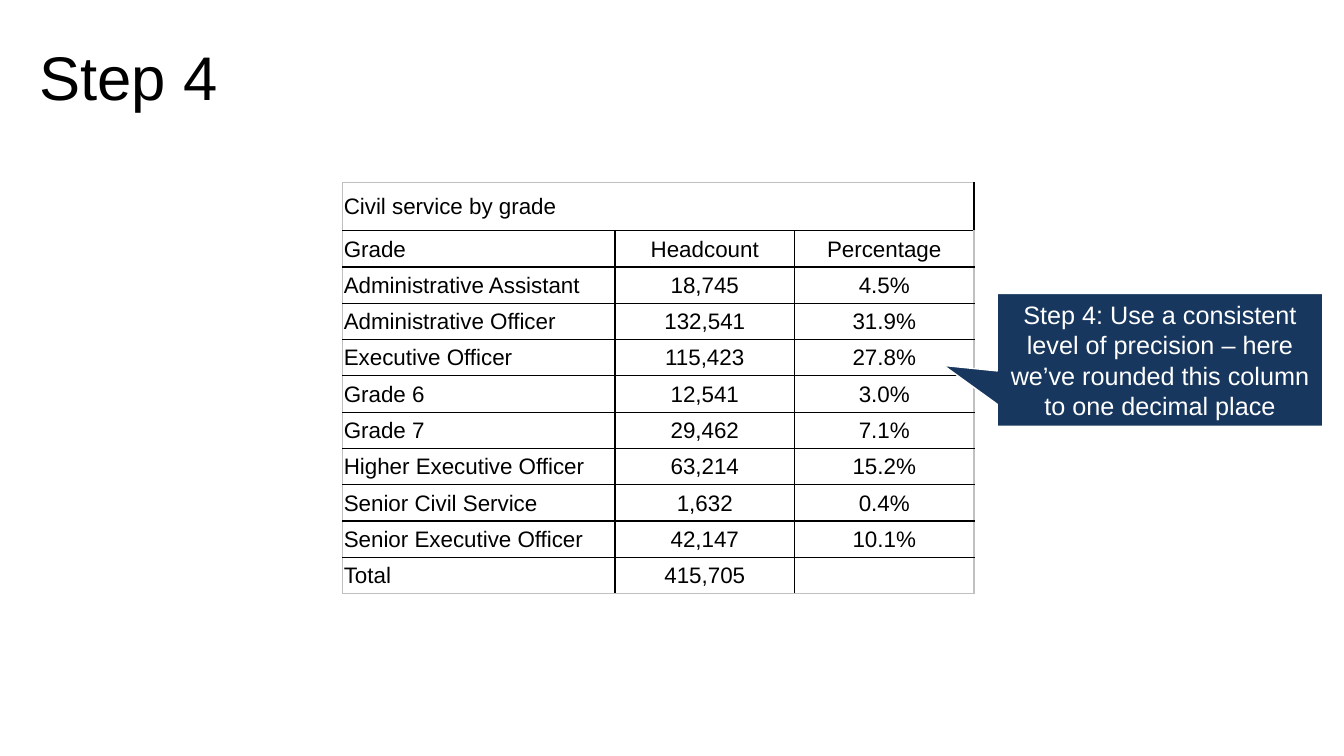
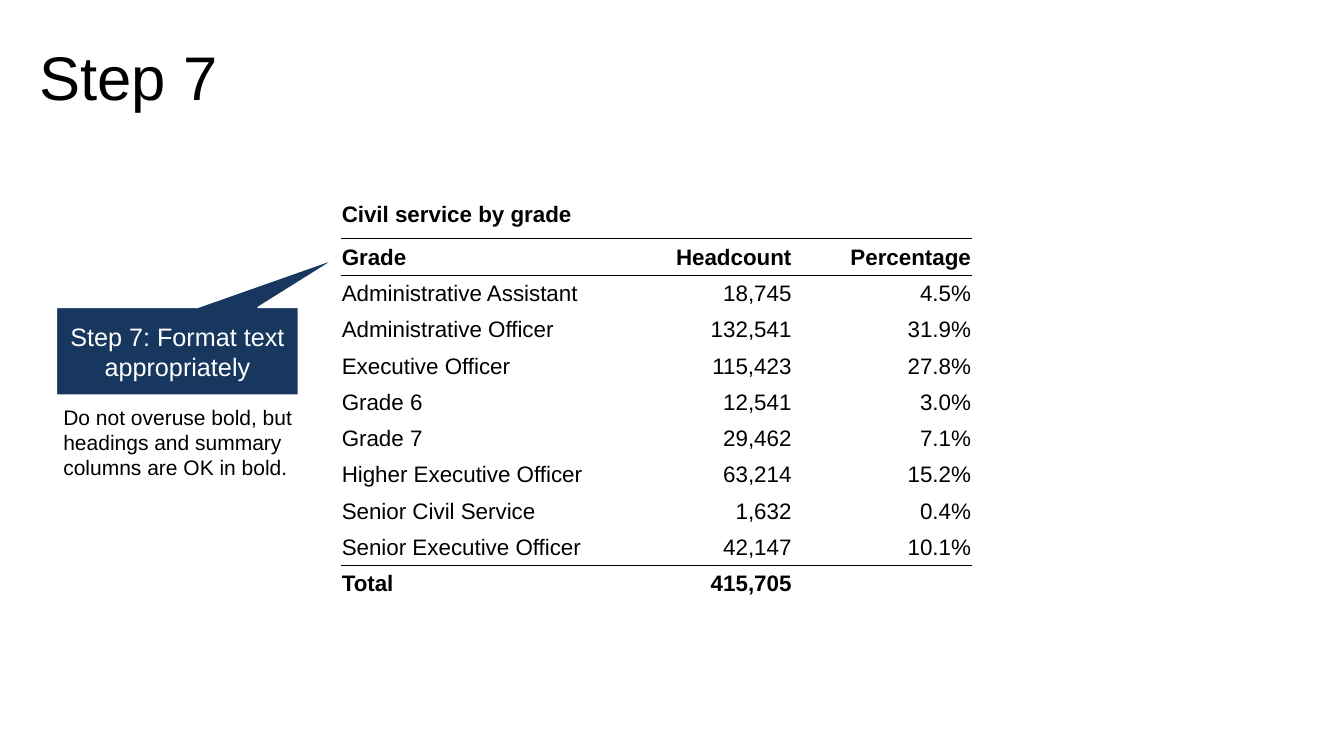
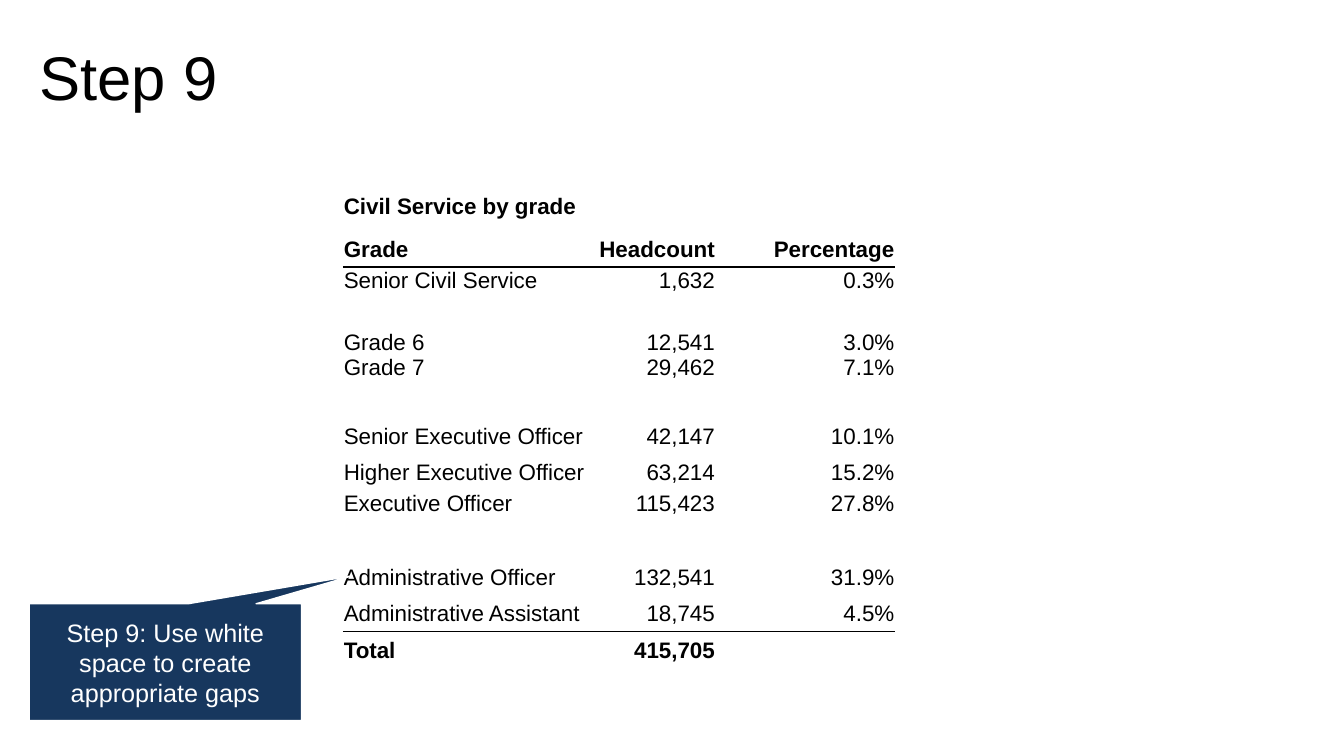
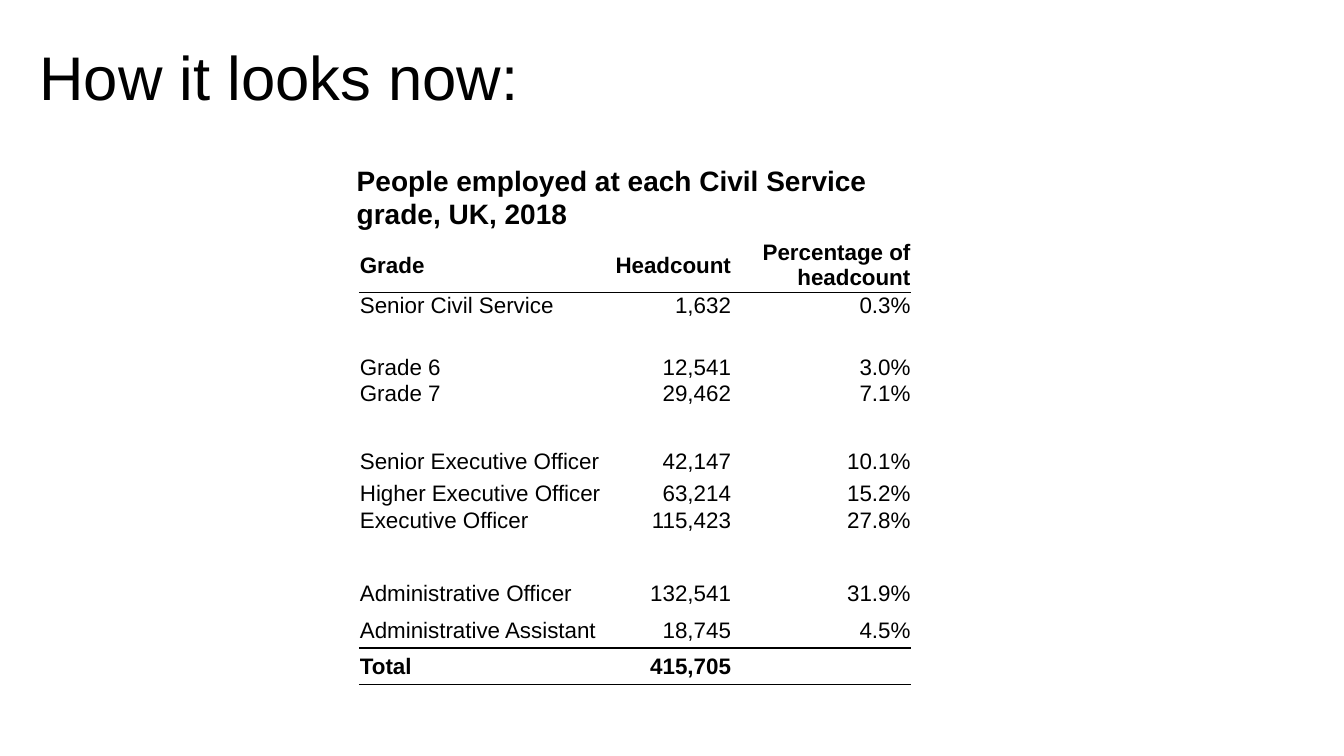
"""Build four slides that improve a table of civil service grades step by step."""
from lxml import etree
from pptx import Presentation
from pptx.dml.color import RGBColor
from pptx.enum.shapes import MSO_SHAPE as Shape
from pptx.enum.text import MSO_ANCHOR as Anchor, MSO_AUTO_SIZE as AutoSize, PP_ALIGN as Align
from pptx.oxml.ns import qn
from pptx.util import Inches, Pt

BLACK, WHITE, NAVY, GREY = "000000", "FFFFFF", "17375E", "C0C0C0"
FONT = "Arial"
LINE = 0.36
TIGHT = 0.27


def color(value):
    return RGBColor.from_string(value)


def write(frame, text, size, ink=BLACK, bold=False, align=Align.LEFT):
    frame.text = text
    frame.word_wrap = True
    for para in frame.paragraphs:
        para.alignment = align
        for span in para.runs:
            span.font.name = FONT
            span.font.size = Pt(size)
            span.font.bold = bold
            span.font.color.rgb = color(ink)


header = ("Grade", "Headcount", "Percentage", LINE, Anchor.MIDDLE)
total = ("Total", "415,705", "", LINE, Anchor.MIDDLE)
alphabetical = [
    ("Administrative Assistant", "18,745", "4.5%"),
    ("Administrative Officer", "132,541", "31.9%"),
    ("Executive Officer", "115,423", "27.8%"),
    ("Grade 6", "12,541", "3.0%"),
    ("Grade 7", "29,462", "7.1%"),
    ("Higher Executive Officer", "63,214", "15.2%"),
    ("Senior Civil Service", "1,632", "0.4%"),
    ("Senior Executive Officer", "42,147", "10.1%"),
]
even_rows = [
    ("Civil service by grade", "", "", 0.48, Anchor.MIDDLE),
    header,
    *[(*grade, LINE, Anchor.MIDDLE) for grade in alphabetical],
    total,
]
by_seniority = [
    ("Senior Civil Service", "1,632", "0.3%", 0.6, Anchor.TOP),
    ("Grade 6", "12,541", "3.0%", TIGHT, Anchor.BOTTOM),
    ("Grade 7", "29,462", "7.1%", 0.63, Anchor.TOP),
    ("Senior Executive Officer", "42,147", "10.1%", LINE, Anchor.MIDDLE),
    ("Higher Executive Officer", "63,214", "15.2%", LINE, Anchor.MIDDLE),
    ("Executive Officer", "115,423", "27.8%", 0.68, Anchor.TOP),
    ("Administrative Officer", "132,541", "31.9%", LINE, Anchor.MIDDLE),
    ("Administrative Assistant", "18,745", "4.5%", LINE, Anchor.MIDDLE),
    total,
]
spaced_rows = [("Civil Service by grade", "", "", 0.48, Anchor.MIDDLE), header, *by_seniority]
final_rows = [("Grade", "Headcount", "Percentage of headcount", 0.54, Anchor.MIDDLE), *by_seniority]
final_rows[5] = ("Higher Executive Officer", "63,214", "15.2%", TIGHT, Anchor.MIDDLE)

wide = (2.7, 1.78, 1.78)
narrow = (2.47, 1.23, 1.78)
pages = [
    {"title": "Step 4", "rows": even_rows, "at": (3.4, 1.81), "columns": wide,
     "grid": True, "caption": True, "bold": (), "rules": (), "align": Align.CENTER,
     "callout": ("Step 4: Use a consistent level of precision – here we’ve rounded this column "
                 "to one decimal place", (9.89, 2.91, 3.23, 1.32), (-0.665, 0.042))},
    {"title": "Step 7", "rows": even_rows, "at": (3.38, 1.89), "columns": wide,
     "grid": False, "caption": True, "bold": (0, 1, 10), "rules": (0, 1, 9), "align": Align.RIGHT,
     "callout": ("Step 7: Format text appropriately", (0.56, 3.05, 2.4, 0.87), (0.656, -1.057)),
     "note": ("Do not overuse bold, but headings and summary columns are OK in bold.",
              (0.53, 3.96, 2.96, 0.86), 15, False)},
    {"title": "Step 9", "rows": spaced_rows, "at": (3.4, 1.81), "columns": narrow,
     "grid": False, "caption": True, "bold": (0, 1, 10), "rules": (1, 9), "align": Align.RIGHT,
     "callout": ("Step 9: Use white space to create appropriate gaps",
                 (0.29, 5.99, 2.7, 1.16), (0.686, -0.739))},
    {"title": "How it looks now:", "rows": final_rows, "at": (3.56, 2.36), "columns": narrow,
     "grid": False, "caption": False, "bold": (0, 9), "rules": (0, 8, 9), "align": Align.RIGHT,
     "note": ("People employed at each Civil Service grade, UK, 2018",
              (3.44, 1.57, 6.03, 0.77), 20, True)},
]

deck = Presentation()
deck.slide_width, deck.slide_height = Inches(13.33), Inches(7.5)

for content in pages:
    page = deck.slides.add_slide(deck.slide_layouts[5])
    title = page.shapes.title
    title.left, title.top, title.width, title.height = map(Inches, (0.29, 0.01, 10, 1.57))
    write(title.text_frame, content["title"], 44)
    title.text_frame.auto_size = AutoSize.NONE
    title.text_frame.vertical_anchor = Anchor.MIDDLE
    title.text_frame.paragraphs[0].line_spacing = 0.9

    rows, columns = content["rows"], content["columns"]
    size = (sum(columns), sum(row[3] for row in rows))
    table = page.shapes.add_table(len(rows), len(columns), *map(Inches, content["at"] + size)).table
    table.first_row = table.horz_banding = False
    for column, width in zip(table.columns, columns):
        column.width = Inches(width)
    if content["caption"]:
        table.cell(0, 0).merge(table.cell(0, 2))

    last_row, last_column = len(rows) - 1, len(columns) - 1
    for r, (*texts, height, anchor) in enumerate(rows):
        table.rows[r].height = Inches(height)
        for c, text in enumerate(texts):
            cell = table.cell(r, c)
            cell.margin_left = cell.margin_right = cell.margin_top = Inches(0.01)
            cell.margin_bottom = 0
            cell.vertical_anchor = anchor
            if text:
                write(cell.text_frame, text, 16, bold=r in content["bold"],
                      align=content["align"] if c else Align.LEFT)
            edges = {
                "L": (c == 0, False),
                "R": (c == last_column, False),
                "T": (r == 0, r - 1 in content["rules"]),
                "B": (r == last_row, r in content["rules"]),
            }
            properties = cell._tc.get_or_add_tcPr()
            for side, (outer, ruled) in edges.items():
                border = etree.SubElement(properties, qn(f"a:ln{side}"), w=str(Pt(1)))
                if content["grid"] or ruled:
                    fill = etree.SubElement(border, qn("a:solidFill"))
                    ink = GREY if content["grid"] and outer else BLACK
                    etree.SubElement(fill, qn("a:srgbClr"), val=ink)
                else:
                    etree.SubElement(border, qn("a:noFill"))
            cell.fill.background()

    if "callout" in content:
        text, place, pointer = content["callout"]
        callout = page.shapes.add_shape(Shape.RECTANGULAR_CALLOUT, *map(Inches, place))
        callout.shadow.inherit = False
        callout.adjustments[0], callout.adjustments[1] = pointer
        callout.fill.solid()
        callout.fill.fore_color.rgb = color(NAVY)
        callout.line.color.rgb = color(WHITE)
        callout.line.width = Pt(1)
        callout.text_frame.vertical_anchor = Anchor.MIDDLE
        write(callout.text_frame, text, 18, WHITE, align=Align.CENTER)

    if "note" in content:
        text, place, points, bold = content["note"]
        box = page.shapes.add_textbox(*map(Inches, place))
        write(box.text_frame, text, points, bold=bold)
        box.text_frame.auto_size = AutoSize.SHAPE_TO_FIT_TEXT

deck.save("out.pptx")
